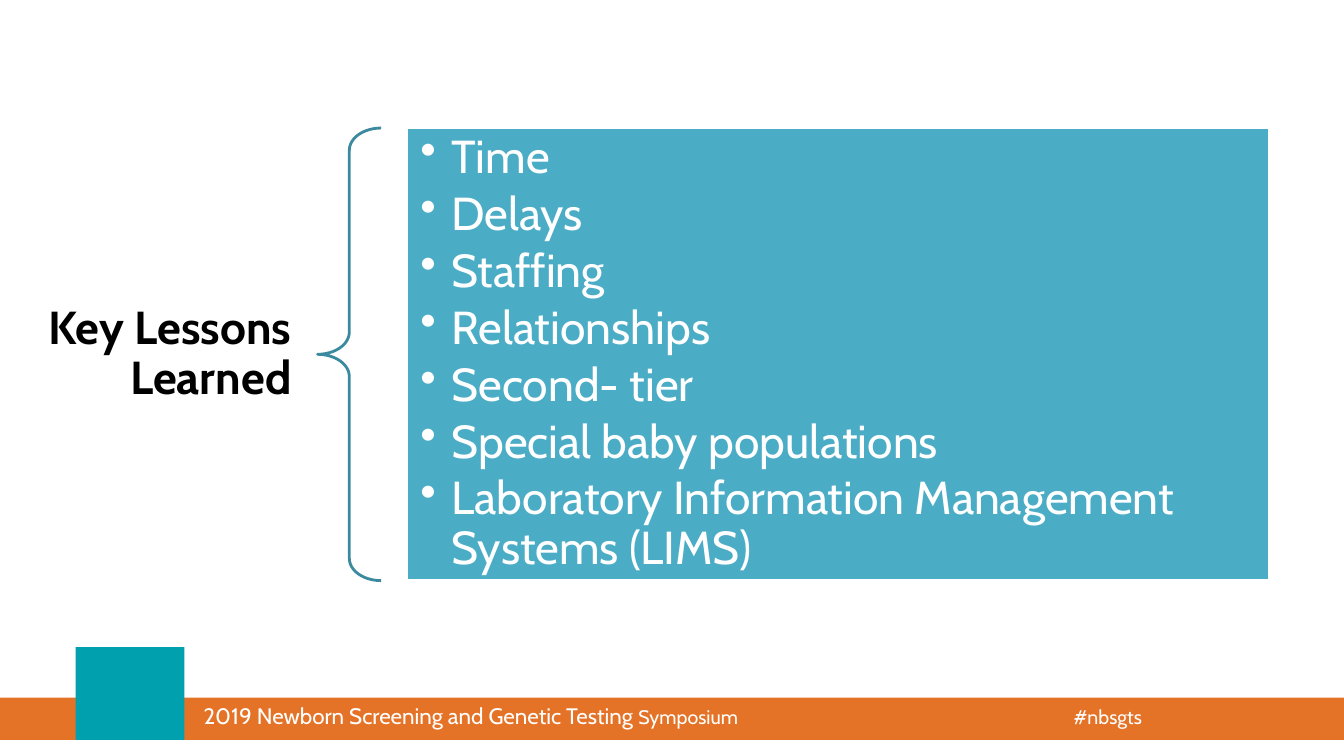
import pptx
import pptx.dml.color
import pptx.enum.shapes
import pptx.enum.text
import pptx.oxml
import pptx.oxml.ns
import pptx.util
from pptx.util import Inches

COLORS = {
    "orange": "E57327",
    "teal": "00A0AF",
    "blue": "4BACC6",
    "brace": "3C8A9F",
    "white": "FFFFFF",
    "black": "000000",
}
FONT = "Cabin"
LESSON_SIZE = 33
LESSONS = [
    "Time",
    "Delays",
    "Staffing",
    "Relationships",
    "Second- tier",
    "Special baby populations",
    "Laboratory Information Management Systems (LIMS)",
]
SHAPES = pptx.enum.shapes.MSO_SHAPE
ALIGN = pptx.enum.text.PP_ALIGN
ANCHOR = pptx.enum.text.MSO_ANCHOR


def rgb(name):
    return pptx.dml.color.RGBColor.from_string(COLORS[name])


def add_property(para, xml):
    """Append one paragraph property, such as a bullet or tab list."""
    namespace = pptx.oxml.ns.nsdecls("a")
    element = pptx.oxml.parse_xml(xml.replace(" ", f" {namespace} ", 1))
    para._p.get_or_add_pPr().append(element)


class SlideBuilder:
    def __init__(self, deck):
        self.page = deck.slides.add_slide(deck.slide_layouts[5])

    def shape(self, kind, area, fill=None, line=None):
        shape = self.page.shapes.add_shape(kind, *map(Inches, area))
        shape.shadow.inherit = False
        if fill:
            shape.fill.solid()
            shape.fill.fore_color.rgb = rgb(fill)
        else:
            shape.fill.background()
        if line:
            shape.line.color.rgb = rgb(line)
            shape.line.width = pptx.util.Pt(2)
        else:
            shape.line.fill.background()
        return shape

    def frame(self, box, side, end, anchor):
        frame = box.text_frame
        frame.word_wrap = True
        frame.auto_size = pptx.enum.text.MSO_AUTO_SIZE.NONE
        frame.vertical_anchor = anchor
        frame.margin_left = frame.margin_right = Inches(side)
        frame.margin_top = frame.margin_bottom = Inches(end)
        return frame

    def style(self, span, size, color, bold=False):
        span.font.name = FONT
        span.font.size = pptx.util.Pt(size)
        span.font.color.rgb = rgb(color)
        span.font.bold = bold

    def title(self, text, area):
        box = self.page.shapes.title
        box.left, box.top, box.width, box.height = map(Inches, area)
        frame = self.frame(box, 0.26, 0.09, ANCHOR.MIDDLE)
        frame.text = text
        para = frame.paragraphs[0]
        para.alignment = ALIGN.RIGHT
        para.line_spacing = 0.9
        self.style(para.runs[0], LESSON_SIZE, "black", bold=True)

    def bullets(self, box, items):
        frame = self.frame(box, 0.14, 0.14, ANCHOR.MIDDLE)
        frame.text = "\n".join(items)
        indent = Inches(0.31)
        for para in frame.paragraphs:
            add_property(para, '<a:buChar char="•"/>')
            properties = para._p.get_or_add_pPr()
            properties.set("marL", str(indent))
            properties.set("indent", str(-indent))
            para.alignment = ALIGN.LEFT
            para.line_spacing = 0.9
            para.space_after = pptx.util.Pt(5)
            self.style(para.runs[0], LESSON_SIZE, "white")

    def footer(self, area, spans, tab):
        box = self.page.shapes.add_textbox(*map(Inches, area))
        para = self.frame(box, 0.1, 0.05, ANCHOR.TOP).paragraphs[0]
        add_property(para, f'<a:tabLst ><a:tab pos="{Inches(tab)}" algn="l"/></a:tabLst>')
        for text, size in spans:
            span = para.add_run()
            span.text = text
            self.style(span, size, "white")


def main():
    deck = pptx.Presentation()
    deck.slide_width, deck.slide_height = Inches(13.33), Inches(7.5)
    slide = SlideBuilder(deck)

    # Footer band with its square
    slide.shape(SHAPES.RECTANGLE, (0, 6.92, 13.33, 0.42), fill="orange")
    slide.shape(SHAPES.RECTANGLE, (0.75, 6.42, 1.08, 0.92), fill="teal")
    slide.footer(
        (1.92, 6.92, 10.25, 0.37),
        [("2019 Newborn Screening and Genetic Testing ", 16), ("Symposium\t#nbsgts", 14)],
        tab=8.63,
    )

    # Title and the brace that links it to the lessons
    slide.title("Key Lessons Learned", (0, 2.81, 3.15, 1.41))
    brace = slide.shape(SHAPES.LEFT_BRACE, (3.15, 1.27, 0.63, 4.49), line="brace")
    brace.adjustments[0] = 0.35
    brace.adjustments[1] = 0.5

    # Lessons panel
    panel = slide.shape(SHAPES.RECTANGLE, (4.03, 1.27, 8.56, 4.49), fill="blue", line="white")
    slide.bullets(panel, LESSONS)

    deck.save("out.pptx")


if __name__ == "__main__":
    main()
